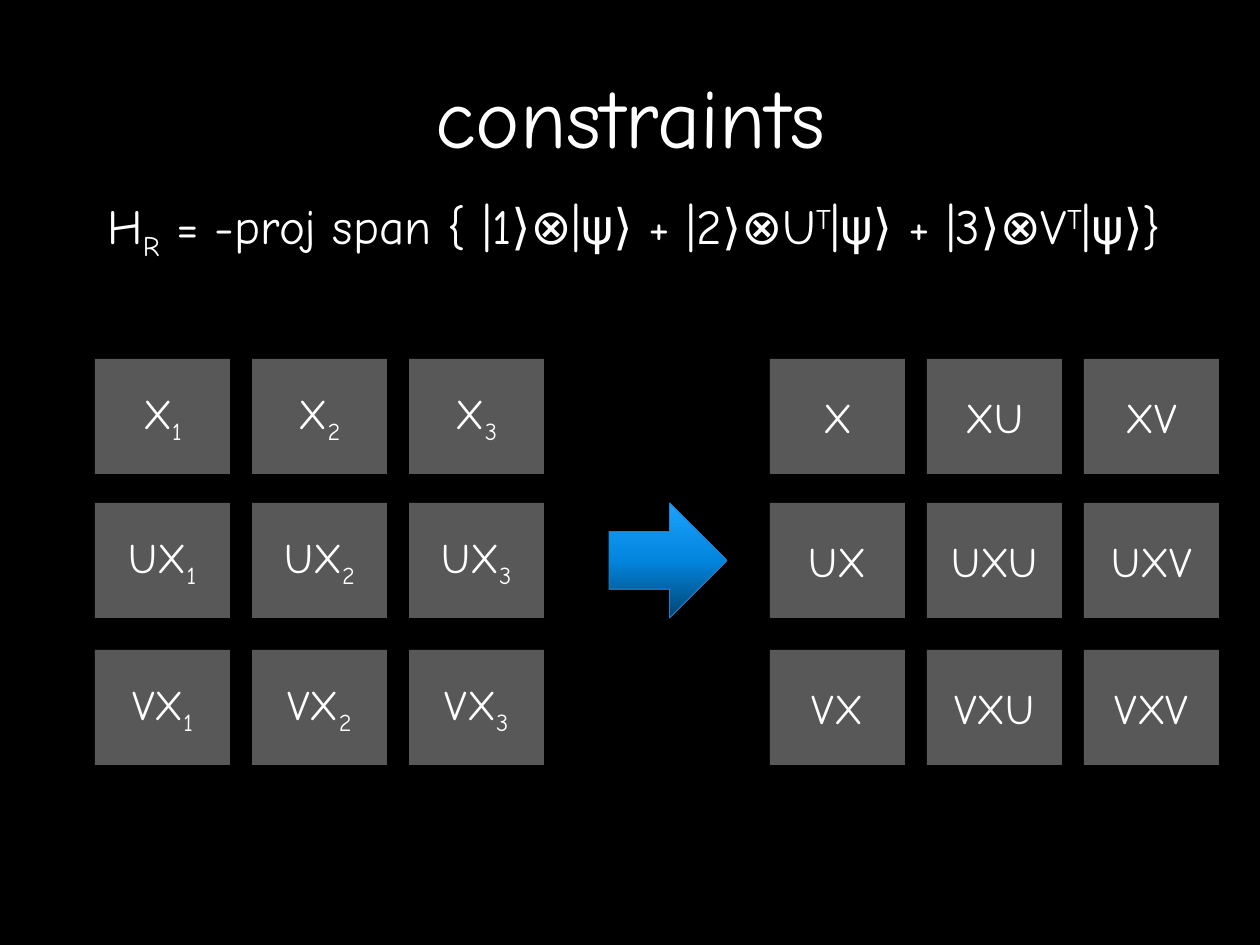
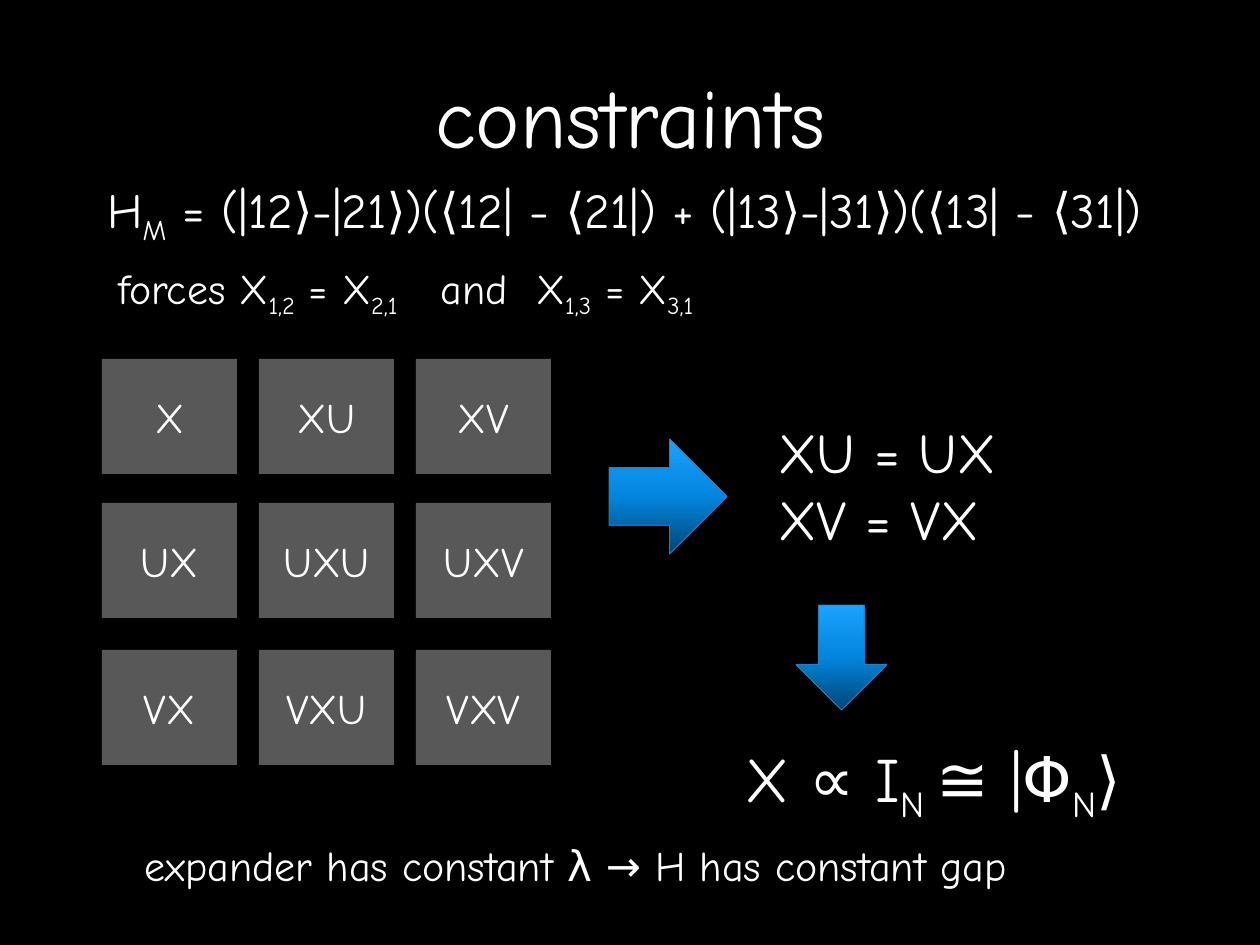
from copy import deepcopy
from dataclasses import dataclass
from typing import NamedTuple

from lxml.etree import SubElement
from pptx import Presentation
from pptx.dml.color import RGBColor
from pptx.enum.shapes import MSO_SHAPE as Shape
from pptx.enum.text import MSO_ANCHOR as Anchor, MSO_AUTO_SIZE as AutoSize, PP_ALIGN as Align
from pptx.oxml.ns import qn
from pptx.util import Emu, Pt

PX_PER_INCH = 126


def px(length):
    return Emu(round(length * 914400 / PX_PER_INCH))


@dataclass(frozen=True)
class Theme:
    font: str = "Comic Neue"
    background: str = "000000"
    text: str = "FFFFFF"
    cell: str = "585858"
    arrow_line: str = "1884CD"
    arrow_stops: tuple = ((0, "014573"), (0.5, "0285DD"), (1, "1AA3FF"))
    title_size: int = 48
    result_size: int = 36
    equation_size: int = 32
    formula_size: int = 28
    body_size: int = 24


class Shifted(NamedTuple):
    text: str
    baseline: int


def sub(text):
    return Shifted(text, -25000)


def sup(text):
    return Shifted(text, 30000)


class Deck:
    column_step = 157
    row_tops = (359, 503, 650)
    cell_size = (135, 115)

    def __init__(self, theme):
        self.theme = theme
        self.presentation = Presentation()
        self.presentation.slide_width = px(1260)
        self.presentation.slide_height = px(945)
        self.slide = None

    def new_slide(self, title):
        layout = self.presentation.slide_layouts[6]
        self.slide = self.presentation.slides.add_slide(layout)
        fill = self.slide.background.fill
        fill.solid()
        fill.fore_color.rgb = RGBColor.from_string(self.theme.background)
        self.title(title)

    def add_runs(self, paragraph, pieces, size):
        for piece in pieces:
            if piece == "\n":
                paragraph.add_line_break()
                continue
            run = paragraph.add_run()
            run.font.name = self.theme.font
            run.font.size = Pt(size)
            run.font.color.rgb = RGBColor.from_string(self.theme.text)
            if isinstance(piece, Shifted):
                run.text = piece.text
                run.font._element.set("baseline", str(piece.baseline))
            else:
                run.text = piece

    def title(self, text):
        shape = self.slide.shapes.add_textbox(px(95), px(16), px(1071), px(197))
        frame = shape.text_frame
        frame.word_wrap = True
        frame.vertical_anchor = Anchor.MIDDLE
        frame.paragraphs[0].alignment = Align.CENTER
        self.add_runs(frame.paragraphs[0], [text], self.theme.title_size)

    def text(self, left, top, width, height, pieces, size, tabs=()):
        shape = self.slide.shapes.add_textbox(px(left), px(top), px(width), px(height))
        frame = shape.text_frame
        frame.word_wrap = False
        frame.auto_size = AutoSize.SHAPE_TO_FIT_TEXT
        paragraph = frame.paragraphs[0]
        if tabs:
            tab_list = SubElement(paragraph._p.get_or_add_pPr(), qn("a:tabLst"))
            for position in tabs:
                SubElement(tab_list, qn("a:tab"), pos=str(px(position)), algn="l")
        self.add_runs(paragraph, pieces, size)

    def matrix(self, left, rows):
        group = self.slide.shapes.add_group_shape()
        width, height = self.cell_size
        for top, row in zip(self.row_tops, rows):
            for column, pieces in enumerate(row):
                cell = group.shapes.add_shape(
                    Shape.RECTANGLE, px(left + column * self.column_step), px(top),
                    px(width), px(height))
                cell.shadow.inherit = False
                cell.fill.solid()
                cell.fill.fore_color.rgb = RGBColor.from_string(self.theme.cell)
                cell.line.fill.background()
                cell.text_frame.vertical_anchor = Anchor.MIDDLE
                paragraph = cell.text_frame.paragraphs[0]
                paragraph.alignment = Align.CENTER
                self.add_runs(paragraph, pieces, self.theme.body_size)

    def arrow(self, kind, left, top, width, height):
        shape = self.slide.shapes.add_shape(kind, px(left), px(top), px(width), px(height))
        shape.shadow.inherit = False
        shape.line.color.rgb = RGBColor.from_string(self.theme.arrow_line)
        shape.line.width = Pt(0.5)
        fill = shape.fill
        fill.gradient()
        fill.gradient_angle = 90
        # The default gradient has two stops; the arrows need a third
        stop_list = shape._element.spPr.find(".//" + qn("a:gsLst"))
        stop_list.append(deepcopy(stop_list[0]))
        for stop, (position, color) in zip(fill.gradient_stops, self.theme.arrow_stops):
            stop.position = position
            stop.color.rgb = RGBColor.from_string(color)


def main():
    theme = Theme()
    deck = Deck(theme)
    factors = ("", "U", "V")
    indexed_blocks = [[[f"{row}X", sub(str(index))] for index in (1, 2, 3)]
                      for row in factors]
    product_blocks = [[[f"{row}X{column}"] for column in factors] for row in factors]

    # Slide 1: the row constraint
    deck.new_slide("constraints")
    deck.matrix(95, indexed_blocks)
    deck.arrow(Shape.RIGHT_ARROW, 609, 503, 118, 115)
    deck.text(95, 189, 1192, 72,
              ["H", sub("R"), " = -proj span { |1⟩⊗|ψ⟩ + |2⟩⊗U", sup("T"),
               "|ψ⟩ + |3⟩⊗V", sup("T"), "|ψ⟩}"], theme.formula_size)
    deck.matrix(770, product_blocks)

    # Slide 2: the symmetry constraint and its consequence
    deck.new_slide("constraints")
    deck.text(95, 173, 1145, 72,
              ["H", sub("M"), " = (|12⟩-|21⟩)(⟨12| - ⟨21|) + (|13⟩-|31⟩)(⟨13| - ⟨31|)"],
              theme.formula_size)
    deck.matrix(102, product_blocks)
    deck.arrow(Shape.RIGHT_ARROW, 609, 439, 118, 115)
    deck.text(766, 411, 246, 149, ["XU = UX", "\n", "XV = VX"], theme.equation_size)
    deck.arrow(Shape.DOWN_ARROW, 796, 605, 91, 105)
    deck.text(733, 733, 438, 89,
              ["X ∝ I", sub("N "), "≅ |Φ", sub("N"), "⟩"], theme.result_size)
    deck.text(106, 256, 660, 63,
              ["forces X", sub("1,2"), " = X", sub("2,1"), "\tand\tX", sub("1,3"),
               " = X", sub("3,1")], theme.body_size, tabs=(322, 418))
    deck.text(132, 833, 954, 63,
              ["expander has constant λ → H has constant gap"], theme.body_size)

    deck.presentation.save("out.pptx")


if __name__ == "__main__":
    main()
